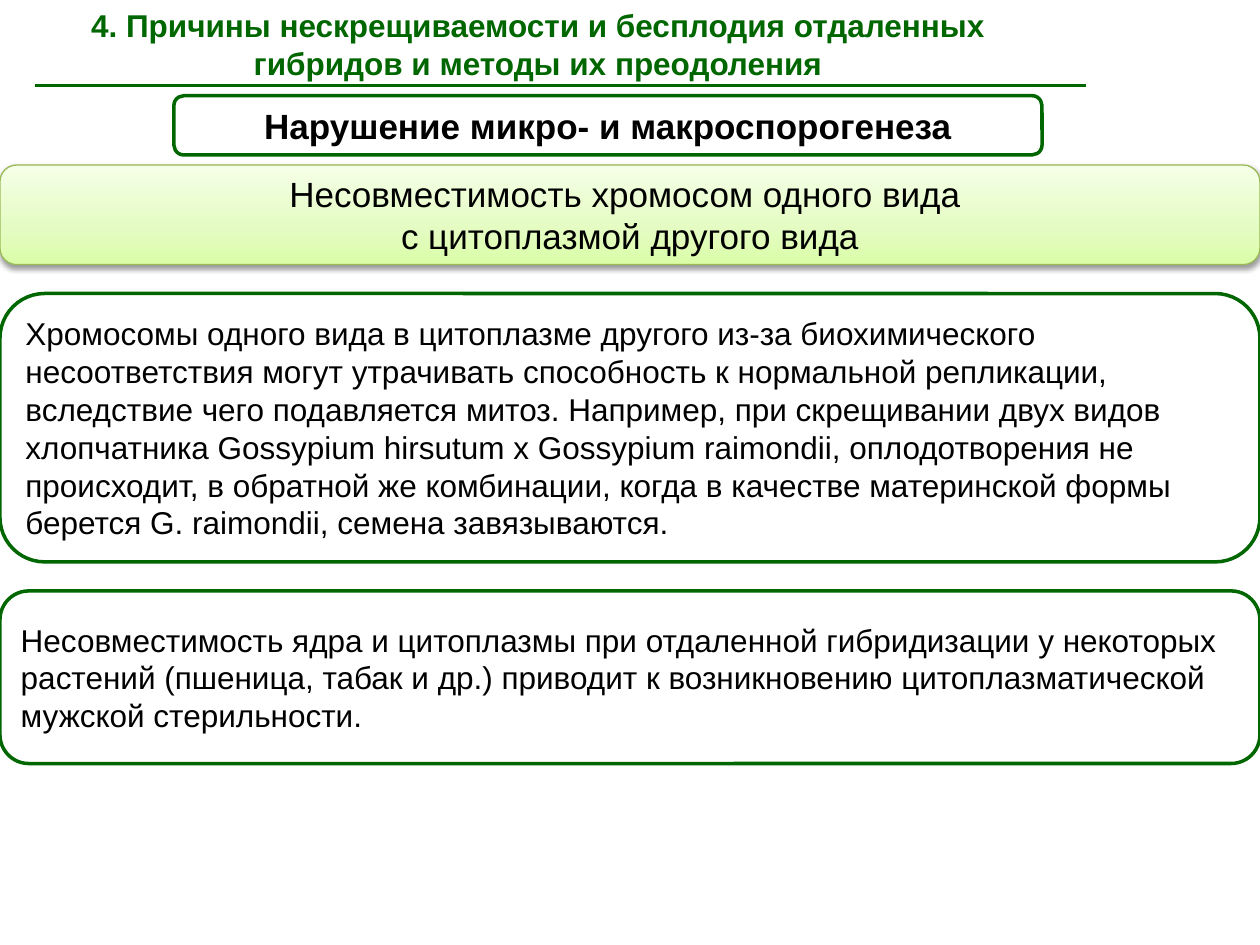
from copy import deepcopy

from lxml.etree import SubElement
from pptx import Presentation
from pptx.dml.color import RGBColor
from pptx.enum.shapes import MSO_CONNECTOR, MSO_SHAPE
from pptx.enum.text import MSO_ANCHOR, PP_ALIGN
from pptx.oxml.ns import qn
from pptx.util import Inches, Pt

THEME = {
    "font": "Arial", "green": "006600", "text": "000000", "rim": "98B955",
    "gradient": [(0, "DAFDA7"), (0.35, "E4FCC2"), (1, "F5FFE7")],
    "heading": 20, "body": 18, "border": 2, "thin": 0.75,
}
TITLE = "4. Причины нескрещиваемости и бесплодия отдаленных гибридов и методы их преодоления"
TITLE_BOX = (0, 0, 8.54, 0.71)
RULE = (0.28, 0.68, 8.62, 0.68)
PANELS = [
    {"box": (1.38, 0.76, 6.89, 0.47), "size": "heading", "bold": True, "center": True,
     "lines": ["Нарушение микро- и макроспорогенеза"]},
    {"box": (0, 1.31, 10, 0.79), "size": "heading", "center": True, "glossy": True,
     "lines": ["Несовместимость хромосом одного вида ", "с цитоплазмой другого вида"]},
    {"box": (0, 2.33, 10, 2.13), "size": "body",
     "lines": ["Хромосомы одного вида в цитоплазме другого из-за биохимического "
               "несоответствия могут утрачивать способность к нормальной репликации, "
               "вследствие чего подавляется митоз. Например, при скрещивании двух видов "
               "хлопчатника Gossypium hirsutum x Gossypium raimondii, оплодотворения не "
               "происходит, в обратной же комбинации, когда в качестве материнской формы "
               "берется G. raimondii, семена завязываются."]},
    {"box": (0, 4.69, 10, 1.37), "size": "body",
     "lines": ["Несовместимость ядра и цитоплазмы при отдаленной гибридизации у некоторых "
               "растений (пшеница, табак и др.) приводит к возникновению цитоплазматической "
               "мужской стерильности."]},
]


def color(name):
    return RGBColor.from_string(THEME[name])


def inches(values):
    return [Inches(v) for v in values]


def write(s, lines, size, ink="text", bold=False, center=False):
    tf = s.text_frame
    tf.word_wrap = True
    tf.text = "\n".join(lines)
    for p in tf.paragraphs:
        p.alignment = PP_ALIGN.CENTER if center else PP_ALIGN.LEFT
        for r in p.runs:
            r.font.name = THEME["font"]
            r.font.size = Pt(THEME[size])
            r.font.bold = bold
            r.font.color.rgb = color(ink)


def add_gradient(s):
    s.fill.gradient()
    s.fill.gradient_angle = 90
    stops = s._element.spPr.find(qn("a:gradFill")).find(qn("a:gsLst"))
    stops.insert(1, deepcopy(stops[0]))
    for stop, (position, rgb) in zip(s.fill.gradient_stops, THEME["gradient"]):
        stop.position = position
        stop.color.rgb = RGBColor.from_string(rgb)


def add_shadow(s):
    effects = s._element.spPr.find(qn("a:effectLst"))
    shadow = SubElement(effects, qn("a:outerShdw"), blurRad=str(Pt(3.1)),
                        dist=str(Pt(1.6)), dir="5400000", rotWithShape="0")
    black = SubElement(shadow, qn("a:srgbClr"), val=THEME["text"])
    SubElement(black, qn("a:alpha"), val="38000")


def add_panel(slide, box, lines, size, bold=False, center=False, glossy=False):
    s = slide.shapes.add_shape(MSO_SHAPE.ROUNDED_RECTANGLE, *inches(box))
    s.shadow.inherit = False
    s.line.color.rgb = color("rim" if glossy else "green")
    s.line.width = Pt(THEME["thin" if glossy else "border"])
    if glossy:
        add_gradient(s)
        add_shadow(s)
    else:
        s.fill.background()
    s.text_frame.vertical_anchor = MSO_ANCHOR.MIDDLE
    write(s, lines, size, bold=bold, center=center)


def add_rule(slide):
    s = slide.shapes.add_connector(MSO_CONNECTOR.STRAIGHT, *inches(RULE))
    s.line.color.rgb = color("green")
    s.line.width = Pt(THEME["border"])
    SubElement(s._element.spPr, qn("a:effectLst"))


def main():
    """Build the slide on the causes of hybrid sterility."""
    prs = Presentation()
    prs.slide_width, prs.slide_height = Inches(10), Inches(7.5)
    slide = prs.slides.add_slide(prs.slide_layouts[6])
    add_rule(slide)
    for panel in PANELS:
        add_panel(slide, **panel)
    title = slide.shapes.add_textbox(*inches(TITLE_BOX))
    write(title, [TITLE], "body", ink="green", bold=True, center=True)
    prs.save("out.pptx")


if __name__ == "__main__":
    main()
